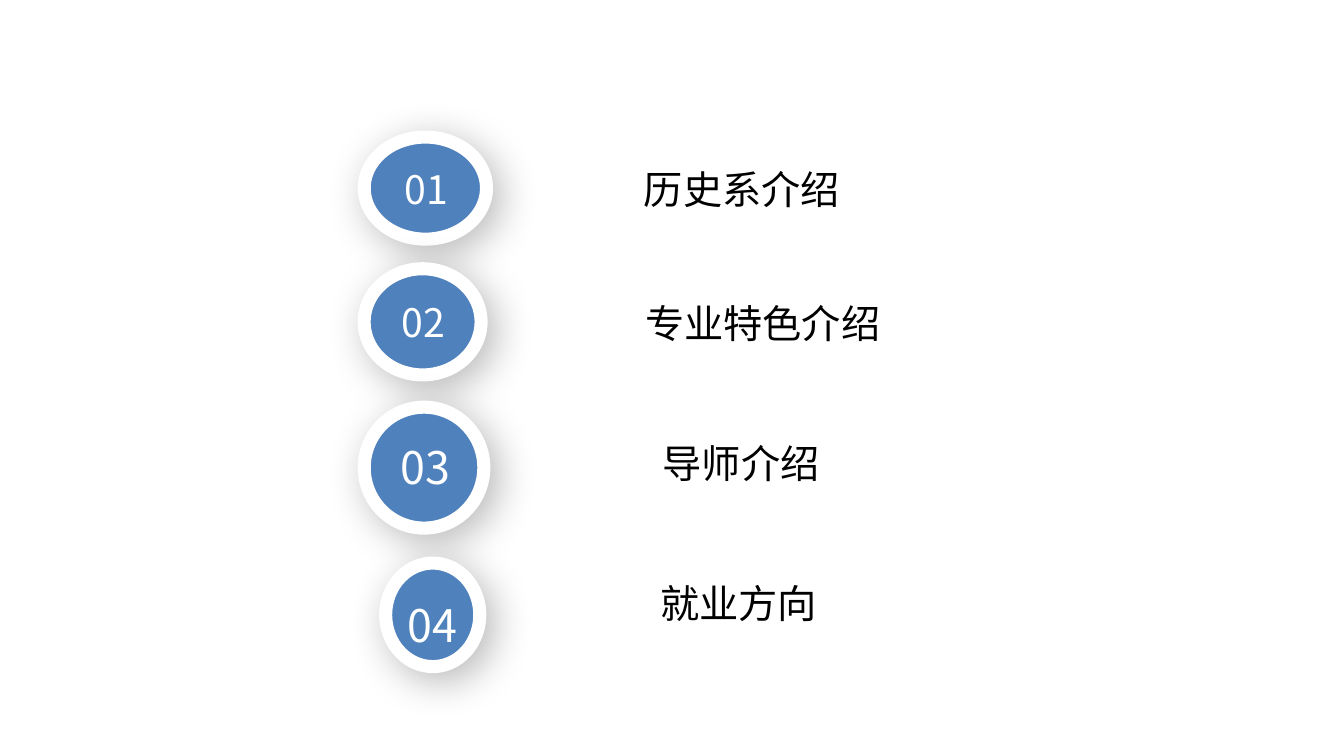
from lxml import etree
from pptx import Presentation
from pptx.dml.color import RGBColor
from pptx.enum.shapes import MSO_SHAPE as Shape
from pptx.enum.text import MSO_ANCHOR as Anchor, PP_ALIGN as Align
from pptx.oxml.ns import qn
from pptx.util import Inches, Pt

FONT = "Noto Sans CJK SC"
BLUE, WHITE, BLACK = "4F81BD", "FFFFFF", "000000"


def color(code):
    return RGBColor.from_string(code)


def write(box, text, size=21, tone=BLACK):
    frame = box.text_frame
    frame.word_wrap = True
    frame.vertical_anchor = Anchor.MIDDLE
    frame.margin_top = frame.margin_bottom = 0
    para = frame.paragraphs[0]
    para.alignment = Align.CENTER
    run = para.add_run()
    run.text = text
    run.font.size = Pt(size)
    run.font.name = FONT
    run.font.color.rgb = color(tone)
    # East Asian glyphs take their own typeface
    etree.SubElement(run.font._element, qn("a:ea"), typeface=FONT)


class Agenda:
    def __init__(self, slide):
        self.slide = slide

    def label(self, text, area, home=None, **style):
        home = home or self.slide.shapes
        box = home.add_textbox(*map(Inches, area))
        write(box, text, **style)

    def shade(self, shape):
        props = shape._element.spPr
        effects = etree.SubElement(props, qn("a:effectLst"))
        outer = etree.SubElement(
            effects, qn("a:outerShdw"), blurRad=str(Pt(22)),
            dist=str(Pt(6)), dir=str(45 * 60000), algn="ctr",
            rotWithShape="0")
        tone = etree.SubElement(outer, qn("a:srgbClr"), val=BLACK)
        etree.SubElement(tone, qn("a:alpha"), val="28000")

    def badge(self, text, oval, area, size):
        group = self.slide.shapes.add_group_shape()
        disc = group.shapes.add_shape(Shape.OVAL, *map(Inches, oval))
        disc.fill.solid()
        disc.fill.fore_color.rgb = color(BLUE)
        disc.line.color.rgb = color(WHITE)
        disc.line.width = Pt(7)
        self.shade(disc)
        self.label(text, area, group.shapes, size=size, tone=WHITE)


# Topic, its box, disc, number box, number size
ITEMS = [
    ("历史系介绍", (3.86, 1.18, 3.32, 0.45),
     (2.71, 1.02, 0.91, 0.76), (2.83, 1.18, 0.69, 0.45), 21),
    ("专业特色介绍", (3.6, 2.18, 4.15, 0.45),
     (2.71, 2, 0.87, 0.79), (2.82, 2.17, 0.66, 0.45), 21),
    ("导师介绍", (4.08, 3.22, 2.87, 0.45),
     (2.71, 3.03, 0.89, 0.9), (2.83, 3.22, 0.67, 0.5), 24),
    ("就业方向", (3.95, 4.26, 3.09, 0.45),
     (2.87, 4.19, 0.7, 0.77), (2.9, 4.4, 0.64, 0.5), 24),
]


def main():
    deck = Presentation()
    # Widescreen, 16:9
    deck.slide_width = Inches(10)
    deck.slide_height = deck.slide_width * 9 // 16
    agenda = Agenda(deck.slides.add_slide(deck.slide_layouts[6]))

    # Topics
    for topic, area, *_ in ITEMS:
        agenda.label(topic, area)

    # Numbered discs
    for num, (_, _, oval, area, size) in enumerate(ITEMS, 1):
        agenda.badge(f"{num:02}", oval, area, size)

    deck.save("out.pptx")


if __name__ == "__main__":
    main()
